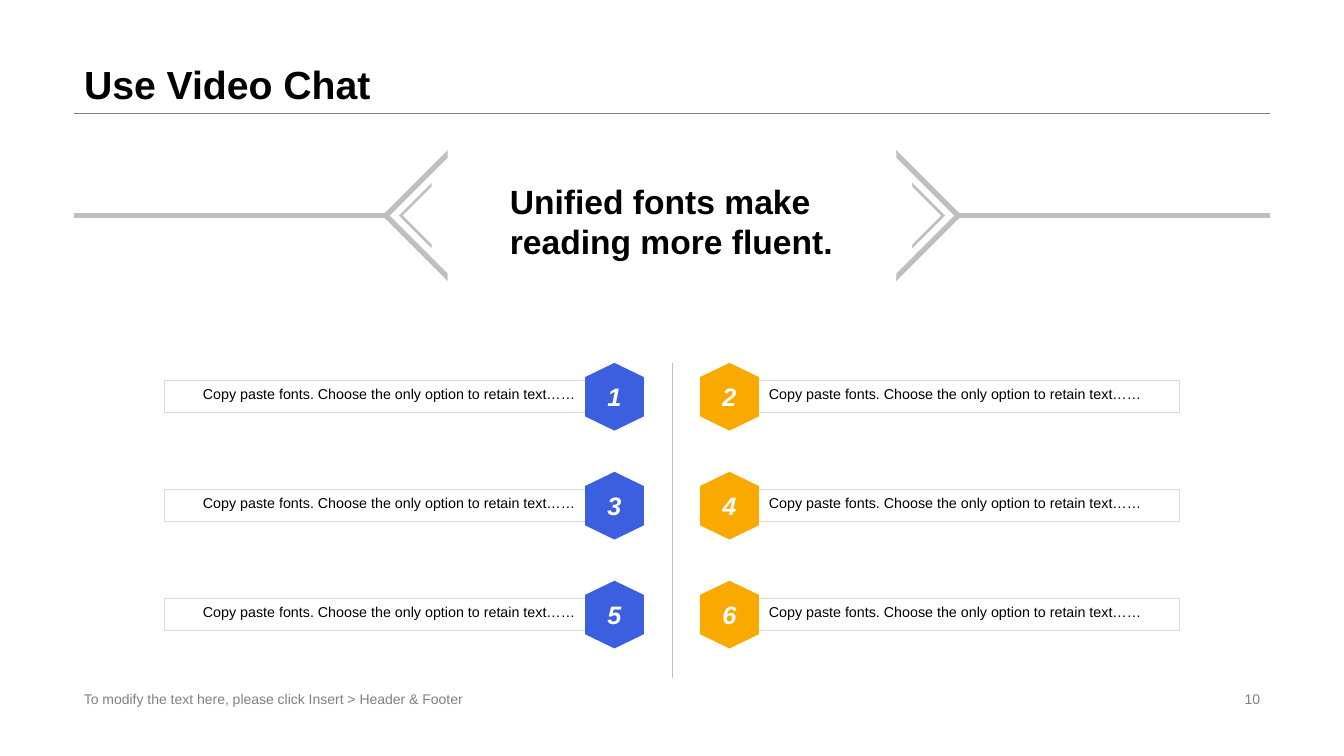
from lxml.etree import SubElement
from pptx import Presentation
from pptx.dml.color import RGBColor
from pptx.enum.shapes import MSO_CONNECTOR as Connector, MSO_SHAPE as Shape
from pptx.enum.text import MSO_ANCHOR as Anchor, MSO_AUTO_SIZE as AutoSize, PP_ALIGN as Align
from pptx.oxml.ns import qn
from pptx.util import Pt

BLACK = RGBColor(0x00, 0x00, 0x00)
WHITE = RGBColor(0xFF, 0xFF, 0xFF)
GRAY = RGBColor(0x80, 0x80, 0x80)
SILVER = RGBColor(0xBF, 0xBF, 0xBF)
PALE = RGBColor(0xD9, 0xD9, 0xD9)
BLUE = RGBColor(0x3B, 0x5F, 0xDE)
ORANGE = RGBColor(0xFA, 0xA9, 0x00)

FONT = "Arial"
CENTER = 480
OPTION_TEXT = "Copy paste fonts. Choose the only option to retain text……"


def write(shape, lines, size, color=BLACK, align=Align.LEFT, anchor=Anchor.MIDDLE,
          bold=False, italic=False):
    frame = shape.text_frame
    frame.word_wrap = True
    frame.auto_size = AutoSize.NONE
    frame.vertical_anchor = anchor
    for index, line in enumerate(lines):
        para = frame.add_paragraph() if index else frame.paragraphs[0]
        para.alignment = align
        span = para.add_run()
        span.text = line
        span.font.name = FONT
        span.font.size = Pt(size)
        span.font.bold = bold
        span.font.italic = italic
        span.font.color.rgb = color
    return frame


def add_rule(page, start, end, color):
    points = [Pt(value) for value in (*start, *end)]
    rule = page.shapes.add_connector(Connector.STRAIGHT, *points)
    rule.line.color.rgb = color
    rule.line.width = Pt(0.25)
    SubElement(rule._element.spPr, qn("a:effectLst"))


def add_filled(page, kind, left, top, width, height, color):
    shape = page.shapes.add_shape(kind, Pt(left), Pt(top), Pt(width), Pt(height))
    shape.shadow.inherit = False
    shape.fill.solid()
    shape.fill.fore_color.rgb = color
    shape.line.fill.background()
    return shape


def add_text(page, box, lines, size, **style):
    text_box = page.shapes.add_textbox(*[Pt(value) for value in box])
    return write(text_box, lines, size, **style)


def add_heading(page, box, text):
    left, top, width, height = box
    title = page.shapes.title
    title.left, title.top, title.width, title.height = [Pt(value) for value in box]
    frame = write(title, [text], 28, anchor=Anchor.BOTTOM, bold=True)
    frame.paragraphs[0].line_spacing = 0.9
    add_rule(page, (left, top + height), (left + width, top + height), GRAY)


def add_chevron(page, apex, middle, size, side):
    half_diagonal = size / 2 ** 0.5
    center = apex - side * half_diagonal
    chevron = add_filled(page, Shape.HALF_FRAME, center - size / 2, middle - size / 2,
                         size, size, SILVER)
    chevron.adjustments[0] = chevron.adjustments[1] = 0.057
    chevron.rotation = 135 if side > 0 else 315


def add_banner(page, box, lines):
    left, top, width, height = box
    middle = top + height / 2
    bar_width = 222
    for side, bar_left in ((-1, left), (1, left + width - bar_width)):
        add_filled(page, Shape.FLOWCHART_PROCESS, bar_left, middle - 1.8, bar_width, 3.6, SILVER)
        add_chevron(page, CENTER + side * 207, middle, 66.2, side)
        add_chevron(page, CENTER + side * 195, middle, 33.1, side)
    frame = add_text(page, (CENTER - 122.9, top + 12, 245.8, 71.3), lines, 24,
                     anchor=Anchor.BOTTOM, bold=True)
    frame.margin_right = 0


def add_hexagon(page, box, color, number):
    left, top, width, height = box
    shoulder = height * 0.21
    corners = [(0.5, 0), (1, shoulder), (1, height - shoulder),
               (0.5, height), (0, height - shoulder), (0, shoulder)]
    points = [(Pt(left + across * width), Pt(top + down)) for across, down in corners]
    builder = page.shapes.build_freeform(*points[0])
    builder.add_line_segments(points[1:], close=True)
    hexagon = builder.convert_to_shape()
    hexagon.shadow.inherit = False
    hexagon.fill.solid()
    hexagon.fill.fore_color.rgb = color
    hexagon.line.fill.background()
    frame = write(hexagon, [str(number)], 18, WHITE, Align.CENTER, bold=True, italic=True)
    frame.margin_left = frame.margin_right = frame.margin_top = frame.margin_bottom = 0


def add_option(page, box, number, on_left):
    left, top, width, height = box
    hexagon_width = 42
    bar_height = 23
    bar_left = left if on_left else left + hexagon_width
    hexagon_left = left + width - hexagon_width if on_left else left
    bar = page.shapes.add_shape(
        Shape.RECTANGLE, Pt(bar_left), Pt(top + (height - bar_height) / 2),
        Pt(width - hexagon_width), Pt(bar_height))
    bar.shadow.inherit = False
    bar.fill.background()
    bar.line.color.rgb = PALE
    bar.line.width = Pt(0.75)
    write(bar, [OPTION_TEXT], 10.2, align=Align.RIGHT if on_left else Align.LEFT,
          anchor=Anchor.TOP)
    add_hexagon(page, (hexagon_left, top, hexagon_width, height),
                BLUE if on_left else ORANGE, number)


def add_options(page, box):
    left, top, width, height = box
    option_width = 342.6
    for index in range(6):
        row, column = divmod(index, 2)
        option_left = left + column * (width - option_width)
        add_option(page, (option_left, top + row * 77.8, option_width, 48.4),
                   index + 1, column == 0)
    add_rule(page, (CENTER, top), (CENTER, top + height), SILVER)


def add_footer(page, box, text, number):
    left, top, width, height = box
    number_width = 229
    add_text(page, (left, top, 326, height), [text], 10, color=GRAY)
    add_text(page, (left + width - number_width, top, number_width, height), [number], 10,
             color=GRAY, align=Align.RIGHT)


def main():
    deck = Presentation()
    deck.slide_width, deck.slide_height = Pt(960), Pt(540)
    page = deck.slides.add_slide(deck.slide_layouts[5])
    add_heading(page, (52.8, 0, 854.4, 80.8), "Use Video Chat")
    add_banner(page, (52.8, 107, 854.4, 94), ["Unified fonts make", "reading more fluent."])
    add_options(page, (117.3, 259.2, 725.4, 225))
    add_footer(page, (52.8, 491, 854.4, 16.5),
               "To modify the text here, please click Insert > Header & Footer", "10")
    deck.save("out.pptx")


if __name__ == "__main__":
    main()
